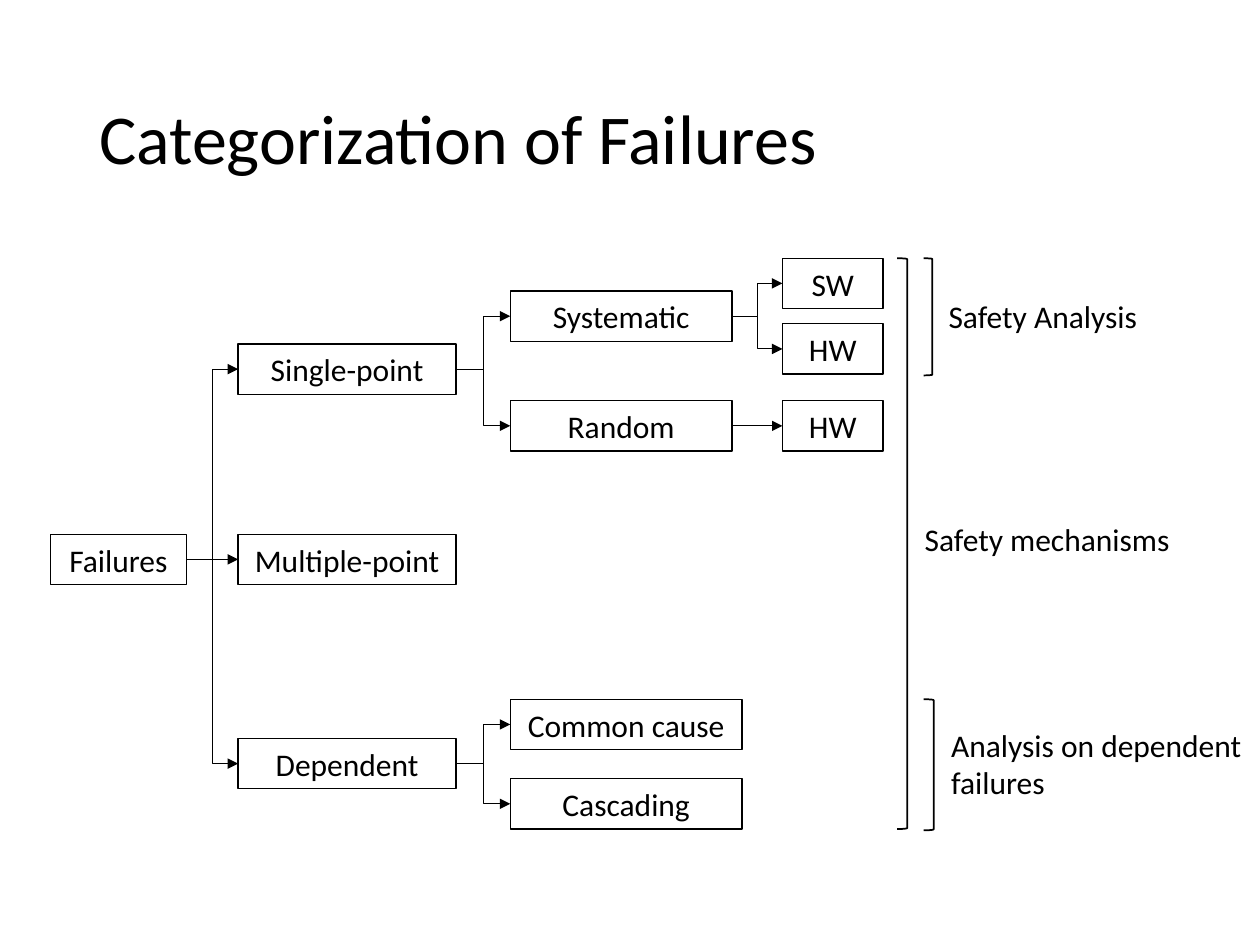
from lxml.etree import SubElement
from pptx import Presentation
from pptx.dml.color import RGBColor
from pptx.enum.shapes import MSO_CONNECTOR, MSO_SHAPE
from pptx.enum.text import MSO_ANCHOR, PP_ALIGN
from pptx.oxml.ns import qn
from pptx.util import Inches, Pt

BLACK = RGBColor(0, 0, 0)
FONT = "Calibri"
BOX_HEIGHT = 0.4
RIGHT_SIDE, LEFT_SIDE = 3, 1

BOXES = {
    "failures": ("Failures", 0.4, 4.24, 1.08),
    "single": ("Single-point", 1.89, 2.73, 1.73),
    "multiple": ("Multiple-point", 1.89, 4.24, 1.73),
    "dependent": ("Dependent", 1.89, 5.86, 1.73),
    "systematic": ("Systematic", 4.05, 2.31, 1.76),
    "random": ("Random", 4.05, 3.18, 1.76),
    "systematic sw": ("SW", 6.21, 2.05, 0.8),
    "systematic hw": ("HW", 6.21, 2.57, 0.8),
    "random hw": ("HW", 6.21, 3.18, 0.8),
    "common": ("Common cause", 4.05, 5.55, 1.84),
    "cascading": ("Cascading", 4.05, 6.18, 1.84),
}

BRANCHES = {
    "failures": ["single", "multiple", "dependent"],
    "single": ["systematic", "random"],
    "systematic": ["systematic sw", "systematic hw"],
    "random": ["random hw"],
    "dependent": ["common", "cascading"],
}

BRACKETS = [(7.33, 2.05, 0.07, 0.93), (7.12, 2.05, 0.08, 4.53), (7.33, 5.55, 0.08, 1.04)]

LABELS = [
    ("Safety Analysis", 7.43, 2.31, 2.09, 0.4),
    ("Safety mechanisms", 7.24, 4.08, 2.2, 0.4),
    ("Analysis on dependent failures", 7.45, 5.71, 2.68, 0.71),
]


def write_text(shape, text, size=18, align=PP_ALIGN.LEFT):
    frame = shape.text_frame
    frame.word_wrap = True
    paragraph = frame.paragraphs[0]
    paragraph.text = text
    paragraph.alignment = align
    paragraph.font.name = FONT
    paragraph.font.size = Pt(size)
    paragraph.font.color.rgb = BLACK
    return paragraph


def draw_outline(shape, width):
    shape.shadow.inherit = False
    shape.fill.background()
    shape.line.color.rgb = BLACK
    shape.line.width = Pt(width)


def add_title(page, text):
    title = page.shapes.add_textbox(Inches(0.69), Inches(0.4), Inches(8.62), Inches(1.45))
    title.text_frame.vertical_anchor = MSO_ANCHOR.MIDDLE
    write_text(title, text, size=40).line_spacing = 0.9


def add_box(page, text, left, top, width):
    box = page.shapes.add_shape(
        MSO_SHAPE.RECTANGLE, Inches(left), Inches(top), Inches(width), Inches(BOX_HEIGHT)
    )
    draw_outline(box, 0.75)
    write_text(box, text, align=PP_ALIGN.CENTER)
    return box


def add_arrow(page, parent, child):
    kind = MSO_CONNECTOR.STRAIGHT if parent.top == child.top else MSO_CONNECTOR.ELBOW
    arrow = page.shapes.add_connector(
        kind,
        parent.left + parent.width,
        parent.top + parent.height // 2,
        child.left,
        child.top + child.height // 2,
    )
    arrow.begin_connect(parent, RIGHT_SIDE)
    arrow.end_connect(child, LEFT_SIDE)
    arrow.line.color.rgb = BLACK
    arrow.line.width = Pt(0.5)
    SubElement(arrow.line._get_or_add_ln(), qn("a:tailEnd"), type="triangle")
    SubElement(arrow._element.spPr, qn("a:effectLst"))


def add_bracket(page, *bounds):
    bracket = page.shapes.add_shape(MSO_SHAPE.RIGHT_BRACKET, *map(Inches, bounds))
    draw_outline(bracket, 1)


def add_label(page, text, *bounds):
    label = page.shapes.add_textbox(*map(Inches, bounds))
    write_text(label, text)


def main():
    deck = Presentation()
    deck.slide_width = Inches(10)
    deck.slide_height = Inches(7.5)
    page = deck.slides.add_slide(deck.slide_layouts[6])

    add_title(page, "Categorization of Failures")
    boxes = {name: add_box(page, *details) for name, details in BOXES.items()}
    for parent, children in BRANCHES.items():
        for child in children:
            add_arrow(page, boxes[parent], boxes[child])
    for bracket in BRACKETS:
        add_bracket(page, *bracket)
    for label in LABELS:
        add_label(page, *label)

    deck.save("out.pptx")


if __name__ == "__main__":
    main()
